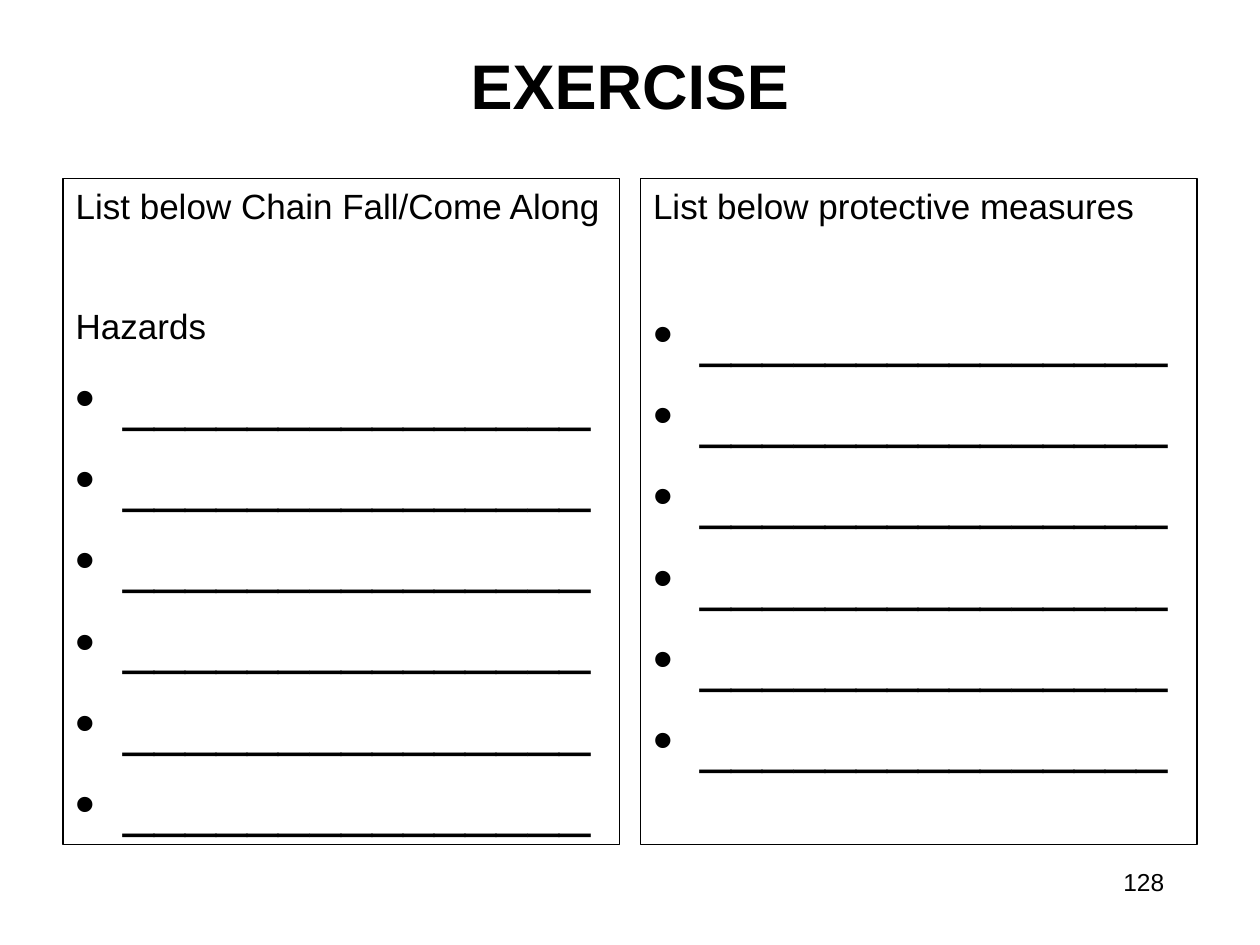
from dataclasses import dataclass

from lxml import etree
from pptx import Presentation
from pptx import util as u
from pptx.dml.color import RGBColor
from pptx.enum import text
from pptx.oxml import ns

BLACK = RGBColor(0, 0, 0)
WHITE = RGBColor(255, 255, 255)
FONT = "Arial"
ANSWER_LINE = "_" * 15
ANSWERS = 6
MARGIN = u.Cm(1.27)
PANEL_TOP, PANEL_WIDTH, PANEL_HEIGHT = u.Cm(3.6), u.Cm(11.22), u.Cm(13.42)
PANEL_STEP = u.Cm(11.64)


@dataclass
class Panel:
    headings: list[str]
    first_gap: float  # points above the first answer line


PANELS = [
    Panel(["List below Chain Fall/Come Along", "Hazards"], 10),
    Panel(["List below protective measures"], 42),
]


def write(paragraph, words: str, size: float, *, bold=False, align=None,
          before: float = 0, bullet: bool | None = None) -> None:
    """Fill a paragraph; bullet True or False sets the list format, None leaves it."""
    if bullet is not None:
        properties = paragraph._p.get_or_add_pPr()
        indent = u.Cm(0.96) if bullet else 0
        properties.set("marL", str(indent))
        properties.set("indent", str(-indent))
        mark = etree.SubElement(properties, ns.qn("a:buChar" if bullet else "a:buNone"))
        if bullet:
            mark.set("char", "•")
    paragraph.space_before = u.Pt(before)
    paragraph.alignment = align
    run = paragraph.add_run()
    run.text = words
    run.font.name = FONT
    run.font.size = u.Pt(size)
    run.font.bold = bold
    run.font.color.rgb = BLACK


def place(shape, left: int, top: int, width: int, height: int) -> None:
    shape.left, shape.top, shape.width, shape.height = left, top, width, height


def fill_panel(body, panel: Panel, left: int) -> None:
    place(body, left, PANEL_TOP, PANEL_WIDTH, PANEL_HEIGHT)
    body.line.color.rgb = BLACK
    body.line.width = u.Pt(0.75)
    frame = body.text_frame
    frame.auto_size = text.MSO_AUTO_SIZE.NONE
    for i, heading in enumerate(panel.headings):
        paragraph = frame.add_paragraph() if i else frame.paragraphs[0]
        write(paragraph, heading, 20, before=44.5 if i else 0, bullet=False)
    for i in range(ANSWERS):
        write(frame.add_paragraph(), ANSWER_LINE, 32,
              before=8 if i else panel.first_gap, bullet=True)


def main() -> None:
    deck = Presentation()
    deck.slide_width, deck.slide_height = u.Cm(25.4), u.Cm(19.05)
    slide = deck.slides.add_slide(deck.slide_layouts.get_by_name("Two Content"))
    slide.background.fill.solid()
    slide.background.fill.fore_color.rgb = WHITE

    title, *bodies = slide.placeholders
    place(title, MARGIN, u.Cm(0.1), u.Cm(22.86), u.Cm(3.18))
    title.text_frame.vertical_anchor = text.MSO_ANCHOR.MIDDLE
    write(title.text_frame.paragraphs[0], "EXERCISE", 36, bold=True,
          align=text.PP_ALIGN.CENTER)

    for i, (body, panel) in enumerate(zip(bodies, PANELS)):
        fill_panel(body, panel, MARGIN + i * PANEL_STEP)

    page_number = slide.shapes.add_textbox(u.Cm(18.21), u.Cm(17.35), u.Cm(5.51), u.Cm(1.32))
    page_number.text_frame.word_wrap = True
    write(page_number.text_frame.paragraphs[0], "128", 14, align=text.PP_ALIGN.RIGHT)

    deck.save("out.pptx")


if __name__ == "__main__":
    main()
